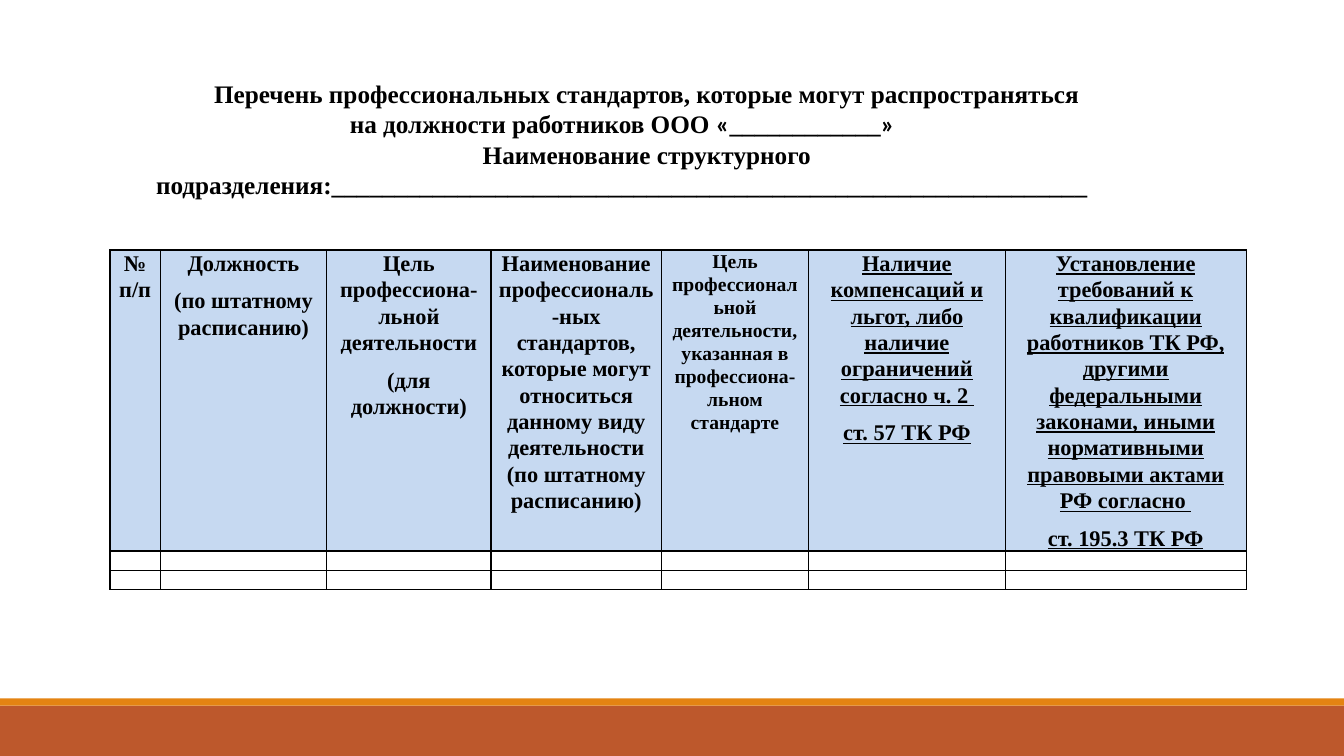
import pptx
import pptx.util
import pptx.dml.color
import pptx.enum.shapes
import pptx.enum.text
from pptx.oxml.ns import qn
from lxml import etree

Inches, Pt = pptx.util.Inches, pptx.util.Pt
CENTER = pptx.enum.text.PP_ALIGN.CENTER
COLORS = {"text": "000000", "header": "C6D9F1", "border": "000000",
          "band": "BD582C", "stripe": "E48312"}
SERIF, SANS = "Times New Roman", "Calibri"

TITLE = [
    [("Перечень профессиональных стандартов, которые могут распространяться "
      "на должности работников ООО ", SERIF),
     ("«", SANS), ("_" * 12, SERIF), ("»", SANS)],
    [("Наименование структурного подразделения:" + "_" * 60, SERIF)],
]

# Column width, font size, underlined, paragraphs
COLUMNS = [
    (0.5, 16, False, ["№ п/п"]),
    (1.65, 16, False, ["Должность", "(по штатному расписанию)"]),
    (1.63, 16, False, ["Цель профессиона-льной деятельности", "(для должности)"]),
    (1.69, 16, False, ["Наименование профессиональ-ных стандартов, которые могут "
                       "относиться данному виду деятельности (по штатному расписанию)"]),
    (1.46, 14, False, ["Цель профессиональной деятельности, указанная в "
                       "профессиона-льном стандарте"]),
    (1.95, 16, True, ["Наличие компенсаций и льгот, либо наличие ограничений "
                      "согласно ч. 2 ", "ст. 57 ТК РФ"]),
    (2.39, 16, True, ["Установление требований к квалификации работников ТК РФ, "
                      "другими федеральными законами, иными нормативными правовыми "
                      "актами РФ согласно ", "ст. 195.3 ТК РФ"]),
]
ROW_HEIGHTS = [1.87, 0.19, 0.19]


def rgb(name):
    return pptx.dml.color.RGBColor.from_string(COLORS[name])


def add_bold_run(paragraph, text, size, font=SERIF, underline=False):
    run = paragraph.add_run()
    run.text = text
    run.font.name = font
    run.font.size = Pt(size)
    run.font.bold = True
    if underline:
        run.font.underline = True
    run.font.color.rgb = rgb("text")


def paragraphs_of(frame, contents):
    """Yield a paragraph of the frame with each item of its content."""
    for index, content in enumerate(contents):
        yield (frame.add_paragraph() if index else frame.paragraphs[0]), content


def add_footer(slide, left, top, width, height):
    stripe_height = 0.07
    for color, y, h in (("band", top + stripe_height, height - stripe_height),
                        ("stripe", top, stripe_height)):
        bar = slide.shapes.add_shape(
            pptx.enum.shapes.MSO_SHAPE.RECTANGLE,
            Inches(left), Inches(y), Inches(width), Inches(h))
        bar.shadow.inherit = False
        bar.fill.solid()
        bar.fill.fore_color.rgb = rgb(color)
        bar.line.fill.background()


def add_title(slide, left, top, width, height):
    title = slide.shapes.add_textbox(
        Inches(left), Inches(top), Inches(width), Inches(height))
    frame = title.text_frame
    frame.word_wrap = True
    frame.vertical_anchor = pptx.enum.text.MSO_ANCHOR.TOP
    for paragraph, runs in paragraphs_of(frame, TITLE):
        paragraph.alignment = CENTER
        paragraph._p.get_or_add_pPr().set("indent", str(Inches(0.49)))
        for text, font in runs:
            add_bold_run(paragraph, text, 18, font)


def set_borders(cell):
    properties = cell._tc.get_or_add_tcPr()
    for index, side in enumerate(("lnL", "lnR", "lnT", "lnB")):
        line = etree.Element(qn("a:" + side), w=str(Pt(1)))
        fill = etree.SubElement(line, qn("a:solidFill"))
        etree.SubElement(fill, qn("a:srgbClr"), val=COLORS["border"])
        properties.insert(index, line)


def fill_header(cell, size, underline, texts):
    cell.fill.solid()
    cell.fill.fore_color.rgb = rgb("header")
    for paragraph, text in paragraphs_of(cell.text_frame, texts):
        paragraph.alignment = CENTER
        paragraph.line_spacing = 1.06
        paragraph.space_after = Pt(8)
        add_bold_run(paragraph, text, size, underline=underline)


def clear_body(cell):
    """Leave the cell unfilled, with a text size that fits its low row."""
    cell.fill.background()
    etree.SubElement(cell.text_frame.paragraphs[0]._p, qn("a:endParaRPr"), sz="1000")


def add_standards_table(slide, left, top):
    frame = slide.shapes.add_table(
        len(ROW_HEIGHTS), len(COLUMNS), Inches(left), Inches(top),
        Inches(sum(column[0] for column in COLUMNS)), Inches(sum(ROW_HEIGHTS)))
    table = frame.table
    table.horz_banding = False
    for row, height in zip(table.rows, ROW_HEIGHTS):
        row.height = Inches(height)
    for c, (width, size, underline, texts) in enumerate(COLUMNS):
        table.columns[c].width = Inches(width)
        for r in range(len(ROW_HEIGHTS)):
            cell = table.cell(r, c)
            cell.margin_left = cell.margin_right = Inches(0.07)
            cell.margin_top = cell.margin_bottom = 0
            if r == 0:
                fill_header(cell, size, underline, texts)
            else:
                clear_body(cell)
            set_borders(cell)


def main():
    deck = pptx.Presentation()
    deck.slide_width, deck.slide_height = Inches(13.33), Inches(7.5)
    slide = deck.slides.add_slide(deck.slide_layouts[6])
    add_footer(slide, 0, 6.93, 13.33, 0.57)
    add_standards_table(slide, 1.09, 2.48)
    add_title(slide, 1.41, 0.73, 9.52, 1.62)
    deck.save("out.pptx")


if __name__ == "__main__":
    main()
